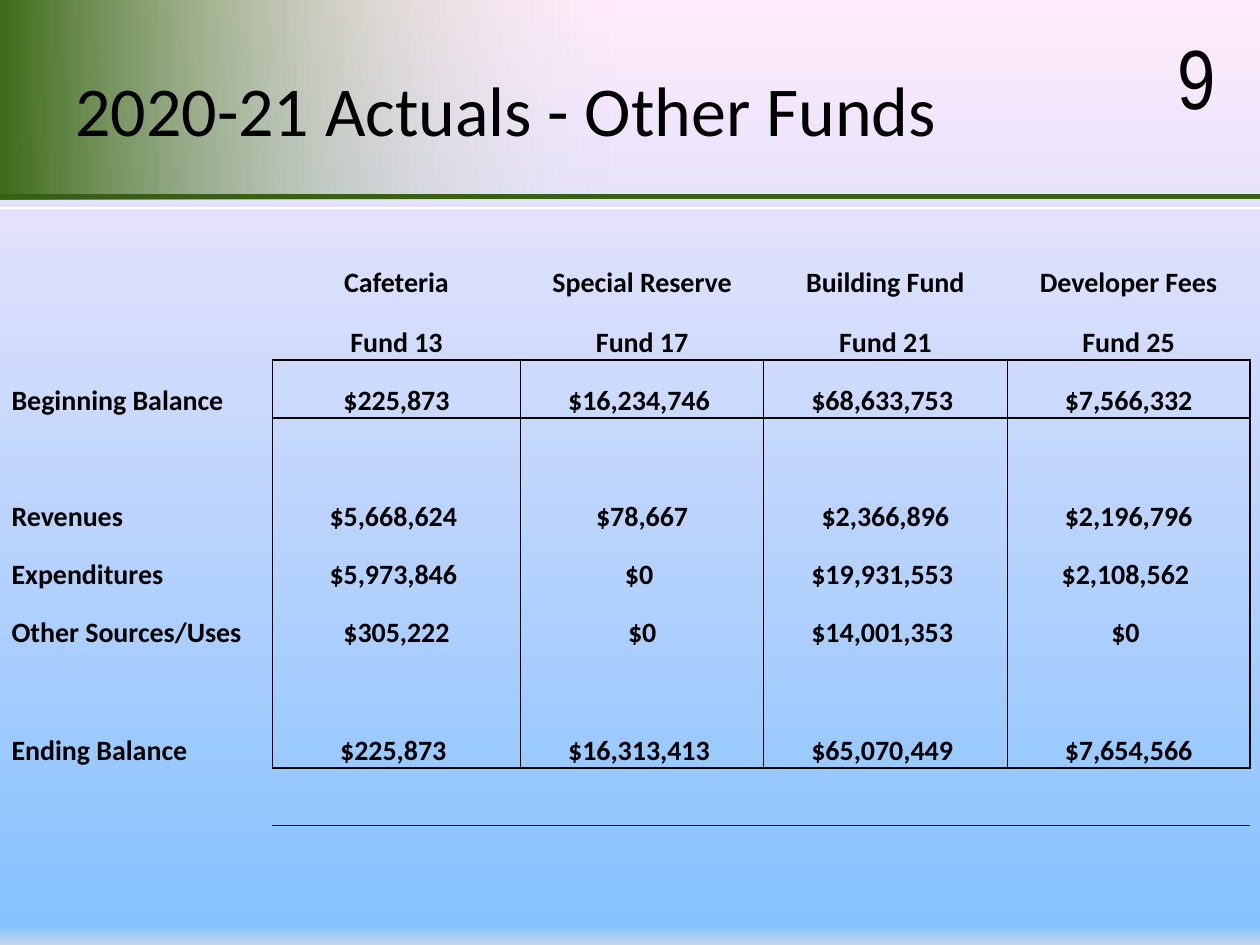
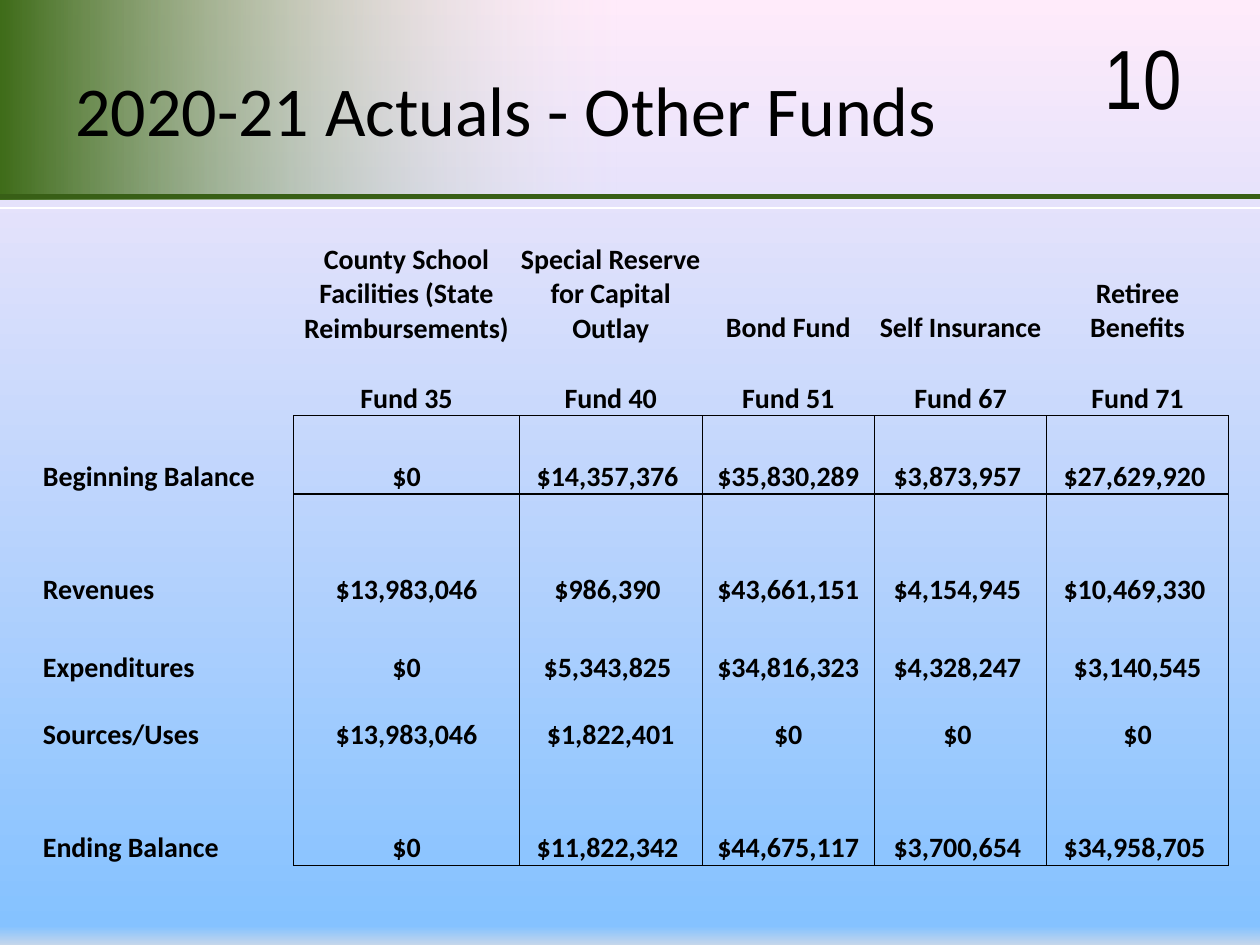
from lxml.etree import SubElement
from pptx import Presentation
from pptx.dml.color import RGBColor as RGB
from pptx.enum.shapes import MSO_CONNECTOR as CONN, MSO_SHAPE as SHAPE
from pptx.enum.text import MSO_ANCHOR as ANCHOR, PP_ALIGN as ALIGN
from pptx.oxml.ns import qn
from pptx.util import Pt

COLORS = {"text": "000000", "rule": "385F16", "highlight": "FFFFFF",
          "green": "3F6C19", "fade": "E8EBE8",
          "mist": "C4D6EB", "sky": "85C2FF", "pink": "FFEBFA"}
TITLE = {"name": "Calibri", "size": Pt(40)}
NUMBER = {"name": "Arial Narrow", "size": Pt(48)}
CELL = {"name": "Calibri", "size": Pt(16), "bold": True}
CELL_BOX = {"margin_left": Pt(0.75), "margin_right": Pt(0.75),
            "margin_top": Pt(0.75), "margin_bottom": 0,
            "vertical_anchor": ANCHOR.BOTTOM}
NO_GRID = "{2D5ABB26-0587-4C30-8999-92F81FD0307C}"
WIDTH = 720
FIRST_ROW, LAST_ROW = 2, 8

FUNDS_13_25 = {
    "left": 5.9,
    "cols": [149.8, 141.8, 139, 139, 139],
    "heights": [33.1, 34.5, 33.1, 33.1, 33.1, 33.1, 33.1, 33.1, 34.5, 33.1, 33.1],
    "rows": [
        ["", "Cafeteria", "Special Reserve", "Building Fund", "Developer Fees"],
        ["", "Fund 13", "Fund 17", "Fund 21", "Fund 25"],
        ["Beginning Balance", "$225,873", "$16,234,746 ", "$68,633,753 ", "$7,566,332"],
        [],
        ["Revenues", "$5,668,624 ", "$78,667", "$2,366,896", "$2,196,796"],
        ["Expenditures", "$5,973,846 ", "$0 ", "$19,931,553 ", "$2,108,562 "],
        ["Other Sources/Uses", "$305,222", "$0", "$14,001,353 ", "$0 "],
        [],
        ["Ending Balance", "$225,873 ", "$16,313,413 ", "$65,070,449 ", "$7,654,566"],
        [],
        [],
    ],
}
FUNDS_35_71 = {
    "left": 23.8,
    "cols": [144, 129, 104.4, 98.5, 98.5, 103.8],
    "heights": [59.2, 40.2, 44.6, 20.2, 44.6, 44.6, 38.2, 20.2, 44.6],
    "rows": [
        ["", "County School Facilities (State Reimbursements)",
         "Special Reserve for Capital Outlay", "Bond Fund", "Self Insurance",
         "Retiree Benefits"],
        ["", "Fund 35", "Fund 40", "Fund 51", "Fund 67", "Fund 71"],
        ["Beginning Balance", "$0", "$14,357,376 ", "$35,830,289", "$3,873,957 ",
         "$27,629,920 "],
        [],
        ["Revenues", "$13,983,046", "$986,390 ", "$43,661,151", "$4,154,945 ",
         "$10,469,330 "],
        ["Expenditures", "$0", "$5,343,825 ", "$34,816,323", "$4,328,247 ", "$3,140,545"],
        ["Sources/Uses", "$13,983,046", "$1,822,401", "$0", "$0 ", "$0"],
        [],
        ["Ending Balance", "$0", "$11,822,342 ", "$44,675,117", "$3,700,654 ",
         "$34,958,705 "],
    ],
}


def set_all(obj, values):
    for name, value in values.items():
        setattr(obj, name, value)


def add_color(parent, color):
    return SubElement(parent, qn("a:srgbClr"), val=COLORS[color])


def set_gradient(fill, element, stops, angle):
    fill.gradient()
    grad = next(element.iter(qn("a:gradFill")))
    stop_list = grad.find(qn("a:gsLst"))
    for old in list(stop_list):
        stop_list.remove(old)
    for pos, color, alpha in stops:
        gs = SubElement(stop_list, qn("a:gs"), pos=str(pos * 1000))
        SubElement(add_color(gs, color), qn("a:alpha"), val=str(alpha * 1000))
    grad.find(qn("a:lin")).set("ang", str(angle * 60000))


def add_run(p, text, font):
    r = p.add_run()
    r.text = text
    set_all(r.font, font)
    r.font.color.rgb = RGB.from_string(COLORS["text"])


def add_text(s, text, box, font, anchor=ANCHOR.TOP):
    tf = s.shapes.add_textbox(*map(Pt, box)).text_frame
    set_all(tf, {"word_wrap": True, "vertical_anchor": anchor})
    add_run(tf.paragraphs[0], text, font)


def add_rule(s, y, color, width):
    line = s.shapes.add_connector(CONN.STRAIGHT, 0, Pt(y), Pt(WIDTH), Pt(y))
    line.line.color.rgb = RGB.from_string(COLORS[color])
    line.line.width = Pt(width)
    SubElement(line._element.spPr, qn("a:effectLst"))


def add_border(cell, side, width):
    ln = SubElement(cell._tc.get_or_add_tcPr(), qn(f"a:ln{side}"),
                    w=str(Pt(width)))
    add_color(SubElement(ln, qn("a:solidFill")), "text")


def cell_borders(row, col, last_col):
    borders = {}
    if FIRST_ROW <= row <= LAST_ROW:
        if col:
            borders["L"] = 0.5
        borders["R"] = 1 if col == last_col else 0.5
    if col and row in (FIRST_ROW, LAST_ROW + 1):
        borders["T"] = 1
    if col and row in (FIRST_ROW - 1, LAST_ROW):
        borders["B"] = 1
    return borders


def fill_cell(cell, text, align, borders):
    set_all(cell, CELL_BOX)
    for side, width in borders.items():
        add_border(cell, side, width)
    cell.fill.background()
    p = cell.text_frame.paragraphs[0]
    p.alignment = align
    if text:
        add_run(p, text, CELL)
    else:
        SubElement(p._p, qn("a:endParaRPr"), sz="1600")


def add_fund_table(s, left, cols, heights, rows):
    frame = s.shapes.add_table(len(rows), len(cols), Pt(left), Pt(138.2),
                               Pt(sum(cols)), Pt(sum(heights)))
    table = frame.table
    set_all(table, {"first_row": False, "horz_banding": False})
    next(frame._element.iter(qn("a:tableStyleId"))).text = NO_GRID
    for column, width in zip(table.columns, cols):
        column.width = Pt(width)
    for i, (height, texts) in enumerate(zip(heights, rows)):
        table.rows[i].height = Pt(height)
        for j, text in enumerate(texts or [""] * len(cols)):
            fill_cell(table.cell(i, j), text, ALIGN.CENTER if j else ALIGN.LEFT,
                      cell_borders(i, j, len(cols) - 1))


def add_fund_slide(prs, number, number_box, funds):
    s = prs.slides.add_slide(prs.slide_layouts[6])
    set_gradient(s.background.fill, s._element,
                 [(0, "mist", 100), (2, "sky", 100), (100, "pink", 100)], 270)
    band = s.shapes.add_shape(SHAPE.RECTANGLE, 0, 0, Pt(WIDTH), Pt(113.8))
    band.shadow.inherit = False
    band.line.fill.background()
    set_gradient(band.fill, band._element,
                 [(0, "green", 100), (49, "fade", 0)], 0)
    add_rule(s, 112.5, "rule", 3)
    add_rule(s, 118.8, "highlight", 1.25)
    add_text(s, "2020-21 Actuals - Other Funds", (36, 12, 648, 99.5), TITLE,
             ANCHOR.MIDDLE)
    add_fund_table(s, **funds)
    add_text(s, number, number_box, NUMBER)


def main():
    prs = Presentation()
    prs.slide_width, prs.slide_height = Pt(WIDTH), Pt(540)
    add_fund_slide(prs, "9", (666, 10.8, 36, 54.7), FUNDS_13_25)
    add_fund_slide(prs, "10", (624.2, 10.8, 77.8, 54.7), FUNDS_35_71)
    prs.save("out.pptx")


if __name__ == "__main__":
    main()
